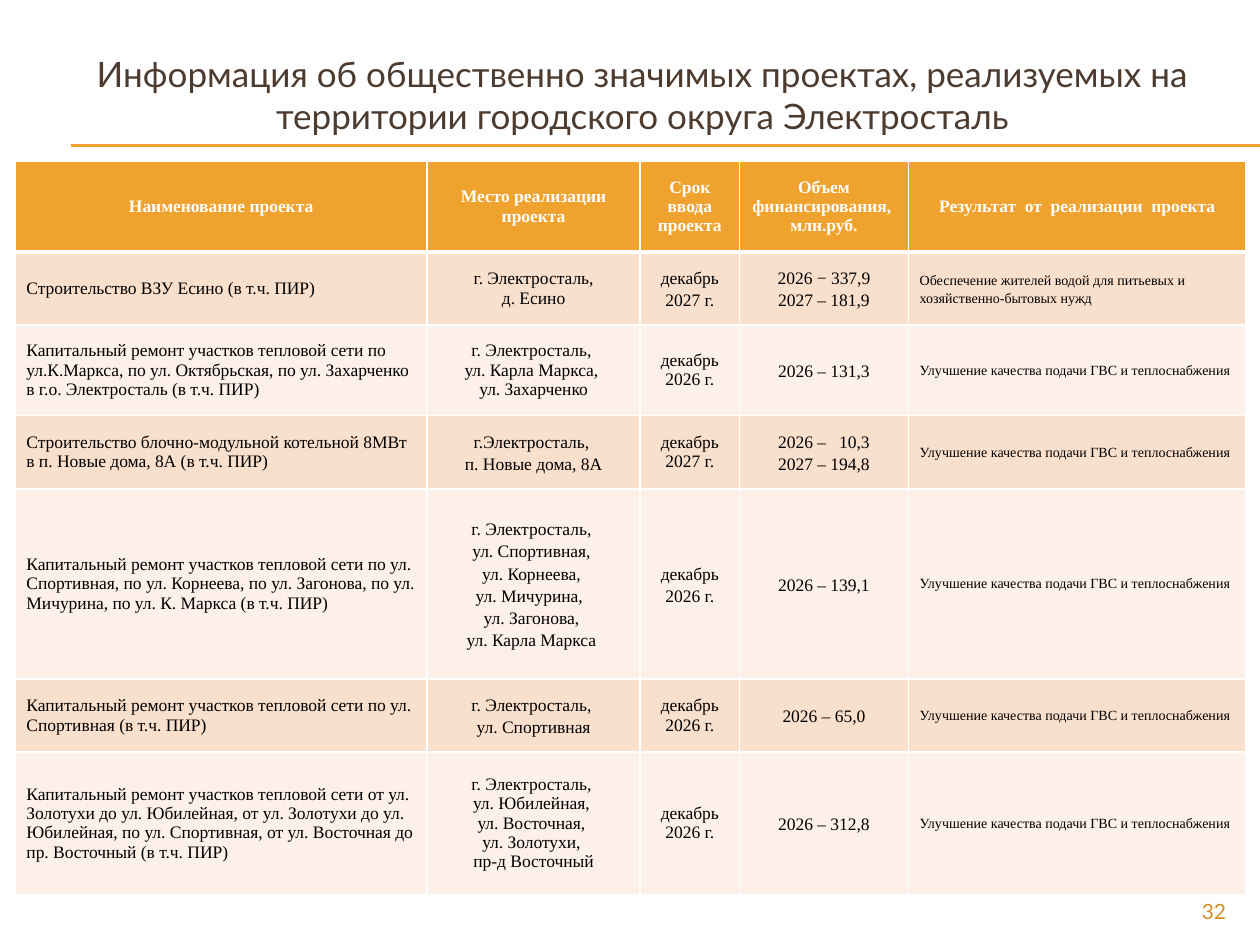
"""Build a slide with a table of socially significant projects of the city district."""
import lxml.etree
import pptx
import pptx.dml.color
import pptx.enum.shapes
import pptx.enum.text
import pptx.oxml.ns
import pptx.util

Inches = pptx.util.Inches
ALIGN = pptx.enum.text.PP_ALIGN
ANCHOR = pptx.enum.text.MSO_ANCHOR

COLORS = {"accent": "F0A22E", "title": "4E3B30", "number": "D48F29", "text": "000000",
          "white": "FFFFFF", "odd": "F9E0CD", "even": "FCF0E8"}
TITLE = ("Информация об общественно значимых проектах, реализуемых на "
         "территории городского округа Электросталь")
PAGE_NUMBER = "32"
HEADER = ("Наименование проекта", "Место реализации проекта", "Срок ввода проекта",
          "Объем финансирования, \nмлн.руб.", "Результат  от  реализации  проекта")
HEATING = "Улучшение качества подачи ГВС и теплоснабжения"
PROJECTS = [
    ("Строительство ВЗУ Есино (в т.ч. ПИР)",
     "г. Электросталь,\nд. Есино", "декабрь 2027 г.", "2026 − 337,9\n2027 – 181,9",
     "Обеспечение жителей водой для питьевых и хозяйственно-бытовых нужд"),
    ("Капитальный ремонт участков тепловой сети по ул.К.Маркса, по ул. Октябрьская, "
     "по ул. Захарченко в г.о. Электросталь (в т.ч. ПИР)",
     "г. Электросталь, \nул. Карла Маркса, \nул. Захарченко",
     "декабрь 2026 г.", "2026 – 131,3", HEATING),
    ("Строительство блочно-модульной котельной 8МВт\nв п. Новые дома, 8А (в т.ч. ПИР)",
     "г.Электросталь, \nп. Новые дома, 8А", "декабрь 2027 г.",
     "2026 –   10,3\n2027 – 194,8", HEATING),
    ("Капитальный ремонт участков тепловой сети по ул. Спортивная, по ул. Корнеева, "
     "по ул. Загонова, по ул. Мичурина, по ул. К. Маркса (в т.ч. ПИР)",
     "г. Электросталь, \nул. Спортивная, \nул. Корнеева, \nул. Мичурина,  \n"
     "ул. Загонова, \nул. Карла Маркса ",
     "декабрь\n2026 г.", "2026 – 139,1", HEATING),
    ("Капитальный ремонт участков тепловой сети по ул. Спортивная (в т.ч. ПИР)",
     "г. Электросталь, \nул. Спортивная", "декабрь 2026 г.", "2026 – 65,0", HEATING),
    ("Капитальный ремонт участков тепловой сети от ул. Золотухи до ул. Юбилейная, "
     "от ул. Золотухи до ул. Юбилейная, по ул. Спортивная, от ул. Восточная до "
     "пр. Восточный (в т.ч. ПИР)",
     "г. Электросталь, \nул. Юбилейная, \nул. Восточная, \nул. Золотухи, \nпр-д Восточный",
     "декабрь 2026 г.", "2026 – 312,8", HEATING),
]
COLUMN_WIDTHS = (3.27, 1.69, 0.79, 1.34, 2.68)
ROW_HEIGHTS = (0.72, 0.58, 0.72, 0.58, 1.51, 0.58, 1.13)
FUNDING, RESULT = 3, 4
LOOSE_CELLS = {(1, 2), (1, 4), (3, 1), (4, 1), (4, 2), (5, 1)}
RULE_HEIGHTS = (1.15, 1.16)


def rgb(name):
    return pptx.dml.color.RGBColor.from_string(COLORS[name])


def apply(target, values):
    for name, value in values.items():
        setattr(target, name, value)


def write(frame, text, color, align, font, spacing=None):
    frame.word_wrap = True
    frame.text = text
    for paragraph in frame.paragraphs:
        apply(paragraph, {"alignment": align, "line_spacing": spacing})
        apply(paragraph.font, font)
        for run in paragraph.runs:
            apply(run.font, font)
            run.font.color.rgb = rgb(color)


def add_text(slide, place, text, color, align, size, anchor):
    frame = slide.shapes.add_textbox(*map(Inches, place)).text_frame
    frame.vertical_anchor = anchor
    write(frame, text, color, align, {"name": "Lato", "size": pptx.util.Pt(size)})


def add_rule(slide, y):
    rule = slide.shapes.add_connector(pptx.enum.shapes.MSO_CONNECTOR.STRAIGHT,
                                      Inches(0.56), Inches(y), Inches(10), Inches(y))
    rule.line.color.rgb = rgb("accent")
    rule.line.width = pptx.util.Pt(0.75)
    lxml.etree.SubElement(rule._element.spPr, pptx.oxml.ns.qn("a:effectLst"))


def add_borders(cell, widths):
    properties = cell._tc.get_or_add_tcPr()
    for side, width in widths.items():
        border = lxml.etree.SubElement(properties, pptx.oxml.ns.qn(f"a:ln{side}"),
                                       w=str(pptx.util.Pt(width)))
        fill = lxml.etree.SubElement(border, pptx.oxml.ns.qn("a:solidFill"))
        lxml.etree.SubElement(fill, pptx.oxml.ns.qn("a:srgbClr"), val=COLORS["white"])


def fill_cell(cell, row, column, text):
    header = row == 0
    apply(cell, {"margin_left": Inches(0.09), "margin_right": Inches(0.09),
                 "vertical_anchor": ANCHOR.MIDDLE})
    add_borders(cell, {"L": 1, "R": 1, "T": 3 if row == 1 else 1, "B": 3 if header else 1})
    cell.fill.solid()
    cell.fill.fore_color.rgb = rgb("accent" if header else "odd" if row % 2 else "even")
    loose = not header and (column == FUNDING or (row, column) in LOOSE_CELLS)
    size = 8 if column == RESULT and not header else 10
    write(cell.text_frame, text, "white" if header else "text",
          ALIGN.CENTER if header or column not in (0, RESULT) else ALIGN.LEFT,
          {"name": "Times New Roman", "size": pptx.util.Pt(size), "bold": header},
          1.15 if loose else None)


def add_projects(slide):
    rows = [HEADER] + PROJECTS
    table = slide.shapes.add_table(len(rows), len(HEADER), Inches(0.12), Inches(1.28),
                                   Inches(sum(COLUMN_WIDTHS)), Inches(sum(ROW_HEIGHTS))).table
    for column, width in zip(table.columns, COLUMN_WIDTHS):
        column.width = Inches(width)
    for row, height in zip(table.rows, ROW_HEIGHTS):
        row.height = Inches(height)
    for row, texts in enumerate(rows):
        for column, text in enumerate(texts):
            fill_cell(table.cell(row, column), row, column, text)


def main():
    deck = pptx.Presentation()
    apply(deck, {"slide_width": Inches(10), "slide_height": Inches(7.5)})
    slide = deck.slides.add_slide(deck.slide_layouts[6])
    for y in RULE_HEIGHTS:
        add_rule(slide, y)
    add_text(slide, (0.35, 0.29, 9.5, 0.92), TITLE, "title", ALIGN.CENTER, 20, ANCHOR.MIDDLE)
    add_projects(slide)
    add_text(slide, (9, 7.08, 0.83, 0.27), PAGE_NUMBER, "number", ALIGN.RIGHT, 12, ANCHOR.TOP)
    deck.save("out.pptx")


if __name__ == "__main__":
    main()
